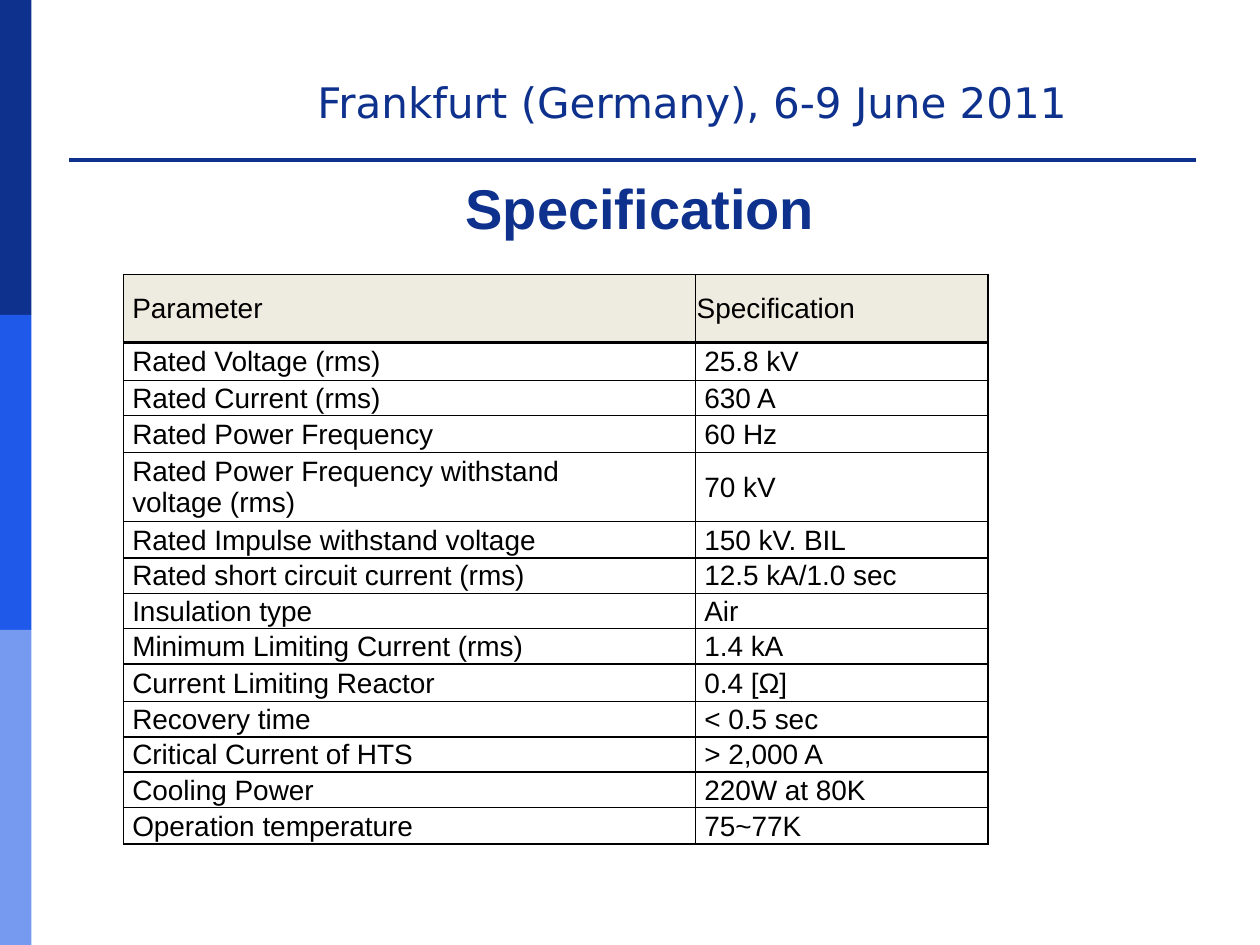
from lxml.etree import SubElement as Sub
from pptx import Presentation
from pptx.dml.color import RGBColor
from pptx.enum.shapes import MSO_SHAPE as Shape
from pptx.enum.text import MSO_ANCHOR as Anchor, PP_ALIGN as Align
from pptx.oxml.ns import qn
from pptx.util import Inches, Pt

NAVY = RGBColor(0x0E, 0x31, 0x8D)
BLUE = RGBColor(0x1F, 0x59, 0xE9)
SKY = RGBColor(0x77, 0x9A, 0xF1)
BEIGE = RGBColor(0xEE, 0xEC, 0xE1)
BLACK = RGBColor(0, 0, 0)


def style(par, name, size, color, bold=False):
    for run in par.runs:
        font = run.font
        font.name, font.size, font.bold = name, Pt(size), bold
        font.color.rgb = color


def border(cell, side, width, color=BLACK):
    props = cell._tc.get_or_add_tcPr()
    line = Sub(props, qn("a:ln" + side), w=str(Pt(width)))
    fill = Sub(line, qn("a:solidFill"))
    Sub(fill, qn("a:srgbClr"), val=str(color))


prs = Presentation()
prs.slide_width, prs.slide_height = Inches(10), Inches(7.5)
slide = prs.slides.add_slide(prs.slide_layouts[5])
shapes = slide.shapes

for i, color in enumerate((NAVY, BLUE, SKY)):
    bar = shapes.add_shape(Shape.RECTANGLE, 0, Inches(2.5 * i), Inches(0.25), Inches(2.5))
    bar.shadow.inherit = False
    bar.fill.solid()
    bar.fill.fore_color.rgb = color
    bar.line.fill.background()

rule = shapes.add_table(1, 1, Inches(0.54), Inches(1.07), Inches(8.96), Inches(0.2))
rule.table.first_row = rule.table.horz_banding = False
strip = rule.table.cell(0, 0)
strip.margin_top = strip.margin_bottom = 0
Sub(strip.text_frame.paragraphs[0]._p, qn("a:endParaRPr"), sz="800")
border(strip, "B", 2.25, NAVY)
strip.fill.background()

venue = shapes.add_textbox(Inches(2.42), Inches(0.56), Inches(6.58), Inches(0.5))
venue.text_frame.word_wrap = True
venue.text_frame.text = "Frankfurt (Germany), 6-9 June 2011"
style(venue.text_frame.paragraphs[0], "DejaVu Sans", 24, NAVY)

title = shapes.title
title.left, title.top = Inches(0.59), Inches(1.38)
title.width, title.height = Inches(8.98), Inches(0.59)
title.text_frame.text = "Specification"
title.text_frame.vertical_anchor = Anchor.MIDDLE
head = title.text_frame.paragraphs[0]
head.alignment = Align.CENTER
head.line_spacing = 0.9
style(head, "Arial", 32, NAVY, True)

rows = [
    ("Parameter", "Specification", 0.54),
    ("Rated Voltage (rms)", "25.8 kV", 0.3),
    ("Rated Current (rms)", "630 A", 0.28),
    ("Rated Power Frequency", "60 Hz", 0.29),
    ("Rated Power Frequency withstand\nvoltage (rms)", "70 kV", 0.55),
    ("Rated Impulse withstand voltage", "150 kV. BIL", 0.29),
    ("Rated short circuit current (rms)", "12.5 kA/1.0 sec", 0.28),
    ("Insulation type", "Air", 0.28),
    ("Minimum Limiting Current (rms)", "1.4 kA", 0.28),
    ("Current Limiting Reactor", "0.4 [Ω]", 0.3),
    ("Recovery time", "< 0.5 sec", 0.28),
    ("Critical Current of HTS", "> 2,000 A", 0.28),
    ("Cooling Power", "220W at 80K", 0.28),
    ("Operation temperature", "75~77K", 0.29),
]
frame = shapes.add_table(len(rows), 2, Inches(0.98), Inches(2.18), Inches(6.85), Inches(4.52))
table = frame.table
table.columns[0].width = Inches(4.54)
table.columns[1].width = Inches(2.32)

for r, (name, value, height) in enumerate(rows):
    table.rows[r].height = Inches(height)
    for c, text in enumerate((name, value)):
        cell = table.cell(r, c)
        cell.text_frame.text = text
        cell.vertical_anchor = Anchor.MIDDLE
        cell.margin_left = Inches(0.01 if (r, c) == (0, 1) else 0.07)
        cell.margin_right = cell.margin_top = Inches(0.01)
        cell.margin_bottom = 0
        for par in cell.text_frame.paragraphs:
            par.alignment = Align.JUSTIFY
            style(par, "Arial", 16, BLACK)
        border(cell, "L", 1)
        border(cell, "R", 1)
        border(cell, "T", 2.25 if r == 1 else 1)
        border(cell, "B", 2.25 if r == 0 else 1)
        if r == 0:
            cell.fill.solid()
            cell.fill.fore_color.rgb = BEIGE
        else:
            cell.fill.background()

prs.save("out.pptx")
